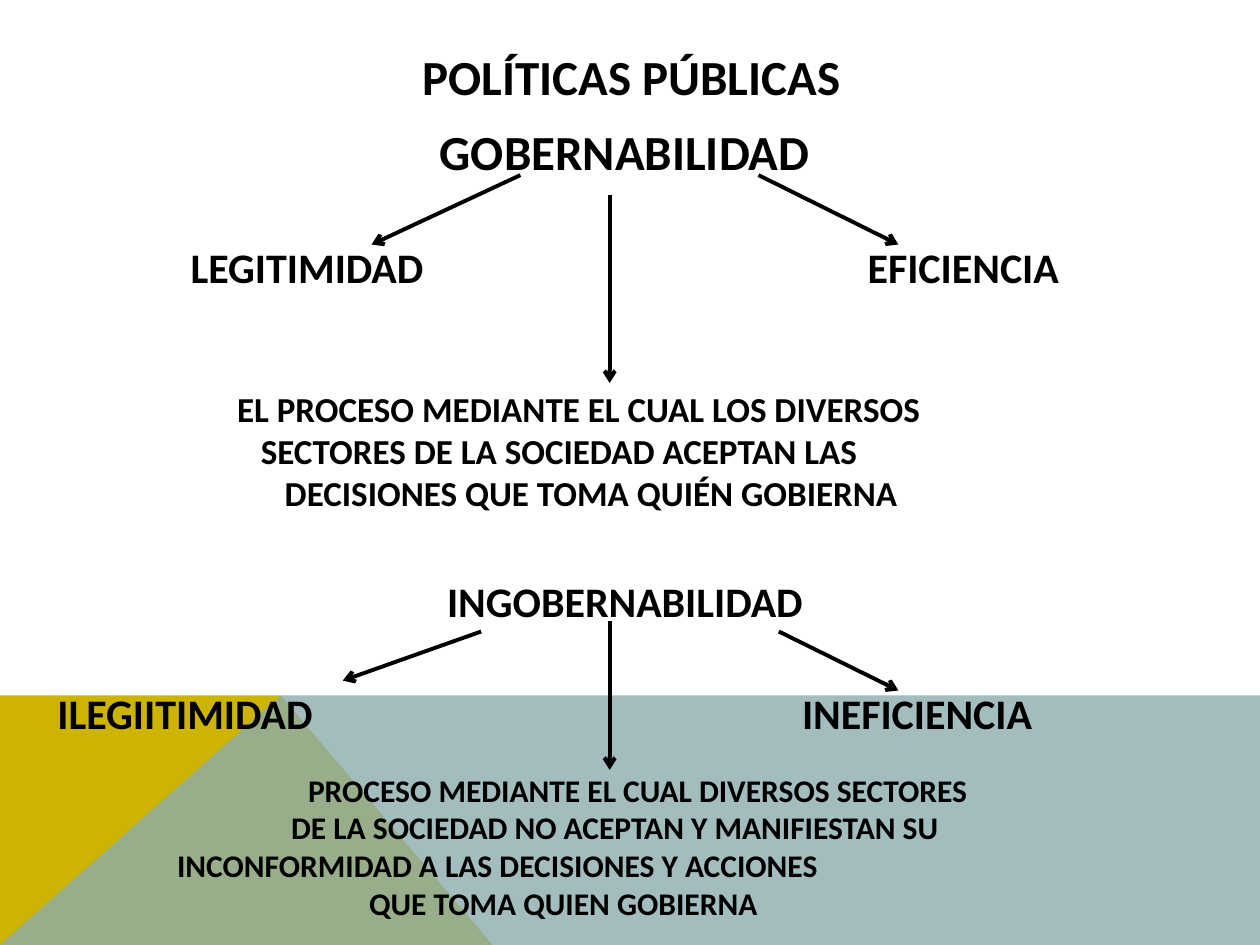
from dataclasses import dataclass

from lxml import etree
from pptx import Presentation
from pptx.dml.color import RGBColor
from pptx.enum.shapes import MSO_CONNECTOR
from pptx.enum.text import MSO_ANCHOR, PP_ALIGN
from pptx.oxml.ns import qn
from pptx.util import Cm, Pt

STRAIGHT = MSO_CONNECTOR.STRAIGHT
MIDDLE = MSO_ANCHOR.MIDDLE
CENTER, LEFT = PP_ALIGN.CENTER, PP_ALIGN.LEFT

WIDTH, HEIGHT = 25.4, 19.05
FONT = "Calibri"
BLACK, MUSTARD, TEAL = "000000", "CCB400", "8CADAE"


@dataclass
class Concept:
    """A heading with two factors and a definition; lengths in cm from the box."""
    heading: str
    heading_size: int
    heading_center: tuple
    factors: list      # (text, centre x, centre y)
    arrows: list       # (from x, from y, to x, to y)
    definition: list   # (line, indent)
    definition_size: int
    definition_at: tuple  # left, centre y


GOVERNABILITY = Concept(
    "GOBERNABILIDAD", 28, (11.69, 0.74),
    [("LEGITIMIDAD", 5.29, 3.08), ("EFICIENCIA", 18.52, 3.08)],
    [(9.59, 1.23, 6.59, 2.63), (14.39, 1.23, 17.21, 2.63),
     (11.39, 1.64, 11.39, 5.42)],
    [("EL PROCESO MEDIANTE EL CUAL LOS DIVERSOS", 0),
     ("SECTORES DE LA SOCIEDAD ACEPTAN LAS", 0.48),
     ("DECISIONES QUE TOMA QUIÉN GOBIERNA", 0.96)],
    20, (3.88, 6.78))

UNGOVERNABILITY = Concept(
    "INGOBERNABILIDAD", 24, (11.7, 0.72),
    [("ILEGIITIMIDAD", 2.83, 2.97), ("INEFICIENCIA", 17.59, 2.97)],
    [(8.8, 1.33, 6.01, 2.32), (14.8, 1.33, 17.21, 2.52),
     (11.39, 1.12, 11.39, 4.12)],
    [("PROCESO MEDIANTE EL CUAL DIVERSOS SECTORES", 2.64),
     ("DE LA SOCIEDAD NO ACEPTAN Y MANIFIESTAN SU", 2.3),
     ("INCONFORMIDAD A LAS DECISIONES Y ACCIONES", 0),
     ("QUE TOMA QUIEN GOBIERNA", 3.87)],
    18, (2.67, 5.66))


def color(value):
    return RGBColor.from_string(value)


def add_text(slide, lines, left, top, width, height, size, alignment=CENTER):
    """Add bold text; lines are (text, indent in cm) pairs."""
    box = slide.shapes.add_textbox(Cm(left), Cm(top), Cm(width), Cm(height))
    frame = box.text_frame
    frame.word_wrap = True
    frame.vertical_anchor = MIDDLE
    frame.margin_left = frame.margin_right = 0
    frame.margin_top = frame.margin_bottom = 0
    frame.text = "\n".join(text for text, _ in lines)
    for paragraph, (_, indent) in zip(frame.paragraphs, lines):
        paragraph.alignment = alignment
        if indent:
            paragraph._p.get_or_add_pPr().set("marL", str(int(Cm(indent))))
        font = paragraph.runs[0].font
        font.name, font.size, font.bold = FONT, Pt(size), True
        font.color.rgb = color(BLACK)


def add_label(slide, text, center_x, center_y, size):
    width, height = 9, 1.2
    add_text(slide, [(text, 0)], center_x - width / 2, center_y - height / 2,
             width, height, size)


def add_arrow(slide, start_x, start_y, end_x, end_y):
    arrow = slide.shapes.add_connector(
        STRAIGHT, Cm(start_x), Cm(start_y), Cm(end_x), Cm(end_y))
    arrow.line.color.rgb = color(BLACK)
    arrow.line.width = Pt(2.25)
    etree.SubElement(arrow.line._get_or_add_ln(), qn("a:tailEnd"), type="arrow")
    etree.SubElement(arrow._element.spPr, qn("a:effectLst"))


def add_polygon(slide, points, fill, opacity=100):
    first, *rest = [(Cm(x), Cm(y)) for x, y in points]
    builder = slide.shapes.build_freeform(*first)
    builder.add_line_segments(rest, close=True)
    shape = builder.convert_to_shape()
    shape.shadow.inherit = False
    shape.fill.solid()
    shape.fill.fore_color.rgb = color(fill)
    shape.line.fill.background()
    if opacity < 100:
        fill_color = shape._element.spPr.find(".//" + qn("a:srgbClr"))
        etree.SubElement(fill_color, qn("a:alpha"), val=str(opacity * 1000))


def add_footer_band(slide, left, top, width, height):
    bottom, right = top + height, left + width
    peak = (left + 5.66, top)
    add_polygon(slide, [(left, bottom), (left, top), peak,
                        (left + 9.93, bottom)], MUSTARD)
    add_polygon(slide, [(left, bottom), peak, (right, top),
                        (right, bottom)], TEAL, 80)


def add_concept(slide, concept, left, top, width):
    x, y = concept.heading_center
    add_label(slide, concept.heading, left + x, top + y, concept.heading_size)
    for text, x, y in concept.factors:
        add_label(slide, text, left + x, top + y, 24)
    x, y = concept.definition_at
    height = 4
    add_text(slide, concept.definition, left + x, top + y - height / 2,
             width - x, height, concept.definition_size, LEFT)
    for start_x, start_y, end_x, end_y in concept.arrows:
        add_arrow(slide, left + start_x, top + start_y,
                  left + end_x, top + end_y)


def main():
    presentation = Presentation()
    presentation.slide_width, presentation.slide_height = Cm(WIDTH), Cm(HEIGHT)
    slide = presentation.slides.add_slide(presentation.slide_layouts[6])
    add_footer_band(slide, 0, 14.02, WIDTH, HEIGHT - 14.02)
    add_text(slide, [("POLÍTICAS PÚBLICAS", 0)], 2.29, 0.53, 20.88, 2, 28)
    add_concept(slide, GOVERNABILITY, 0.9, 2.3, 23.4)
    add_concept(slide, UNGOVERNABILITY, 0.9, 11.4, 23.4)
    presentation.save("out.pptx")


if __name__ == "__main__":
    main()
